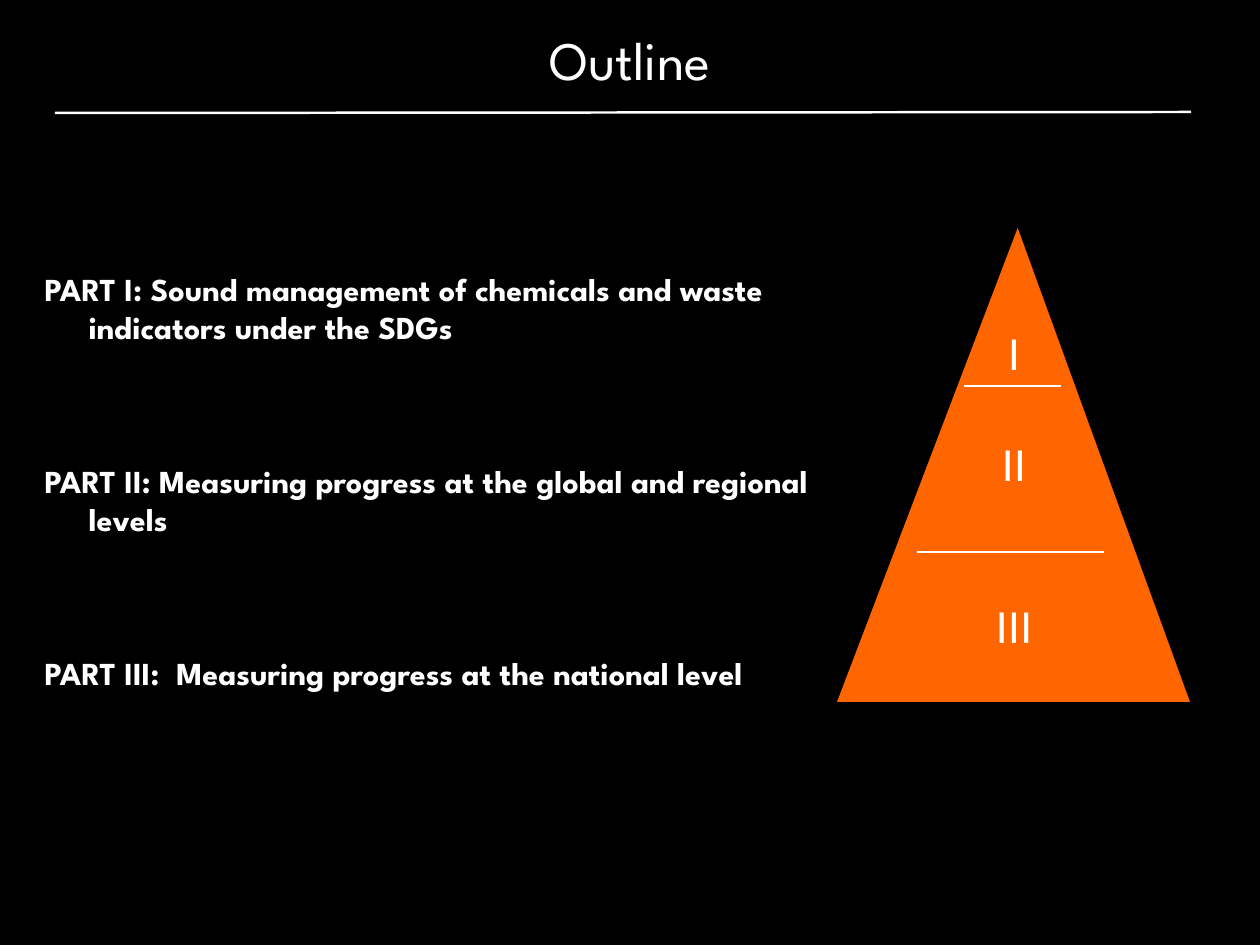
from dataclasses import dataclass
from lxml import etree
from pptx import Presentation
from pptx.dml.color import RGBColor
from pptx.enum.shapes import MSO_CONNECTOR as Connector, MSO_SHAPE as Shape
from pptx.enum.text import MSO_ANCHOR as Anchor, PP_ALIGN as Align
from pptx.oxml.ns import qn
from pptx.util import Pt

TITLE = "Outline"
PARTS = [
    "PART I: Sound management of chemicals and waste indicators under the SDGs",
    "PART II: Measuring progress at the global and regional levels",
    "PART III:  Measuring progress at the national level",
]
LEVELS = [("I", 321), ("II", 432), ("III", 594)]
RULES = [(55, 113, 1191, 112), (917, 552, 1104, 552), (964, 386, 1061, 386)]
PYRAMID = (837, 228, 353, 474)
LEVEL_CENTER, LEVEL_WIDTH, LEVEL_HEIGHT = 1014, 94, 64
HANGING_INDENT = 44
PX = 10320


@dataclass(frozen=True)
class Theme:
    background: RGBColor = RGBColor(0, 0, 0)
    ink: RGBColor = RGBColor(255, 255, 255)
    pyramid: RGBColor = RGBColor(255, 102, 0)
    heading_font: str = "League Spartan"
    label_font: str = "Arial"
    title_size: int = 44
    part_size: int = 26
    label_size: int = 36
    part_gap: float = 93.6
    rule_width: int = 2


THEME = Theme()


def px(*lengths):
    return [length * PX for length in lengths]


def add_text(page, bounds, lines, font, size, bold=False, align=Align.LEFT):
    box = page.shapes.add_textbox(*px(*bounds))
    frame = box.text_frame
    frame.word_wrap = True
    frame.text = "\n".join(lines)
    for para in frame.paragraphs:
        para.alignment = align
        for span in para.runs:
            span.font.name = font
            span.font.size = Pt(size)
            span.font.bold = bold
            span.font.color.rgb = THEME.ink
    return frame


def add_rule(page, ends):
    rule = page.shapes.add_connector(Connector.STRAIGHT, *px(*ends))
    rule.line.color.rgb = THEME.ink
    rule.line.width = Pt(THEME.rule_width)
    etree.SubElement(rule._element.spPr, qn("a:effectLst"))


def add_parts(page):
    frame = add_text(page, (36, 265, 801, 440), PARTS, THEME.heading_font,
                     THEME.part_size, bold=True)
    for index, para in enumerate(frame.paragraphs):
        para.space_before = Pt(THEME.part_gap if index else 0)
        properties = para._p.get_or_add_pPr()
        properties.set("marL", str(HANGING_INDENT * PX))
        properties.set("indent", str(-HANGING_INDENT * PX))


def add_pyramid(page):
    pyramid = page.shapes.add_shape(Shape.ISOSCELES_TRIANGLE, *px(*PYRAMID))
    pyramid.adjustments[0] = 0.512
    pyramid.shadow.inherit = False
    pyramid.fill.solid()
    pyramid.fill.fore_color.rgb = THEME.pyramid
    pyramid.line.fill.background()


def add_level(page, label, top):
    bounds = (LEVEL_CENTER - LEVEL_WIDTH // 2, top, LEVEL_WIDTH, LEVEL_HEIGHT)
    frame = add_text(page, bounds, [label], THEME.label_font,
                     THEME.label_size, align=Align.CENTER)
    frame.vertical_anchor = Anchor.MIDDLE
    frame.margin_left, frame.margin_top, frame.margin_right, frame.margin_bottom = px(5, 5, 5, 5)


def main():
    deck = Presentation()
    deck.slide_width, deck.slide_height = px(1260, 945)
    page = deck.slides.add_slide(deck.slide_layouts[6])
    page.background.fill.solid()
    page.background.fill.fore_color.rgb = THEME.background

    add_text(page, (0, 22, 1260, 74), [TITLE], THEME.heading_font,
             THEME.title_size, align=Align.CENTER)
    add_parts(page)
    add_pyramid(page)
    for ends in RULES:
        add_rule(page, ends)
    for label, top in LEVELS:
        add_level(page, label, top)
    deck.save("out.pptx")


if __name__ == "__main__":
    main()
